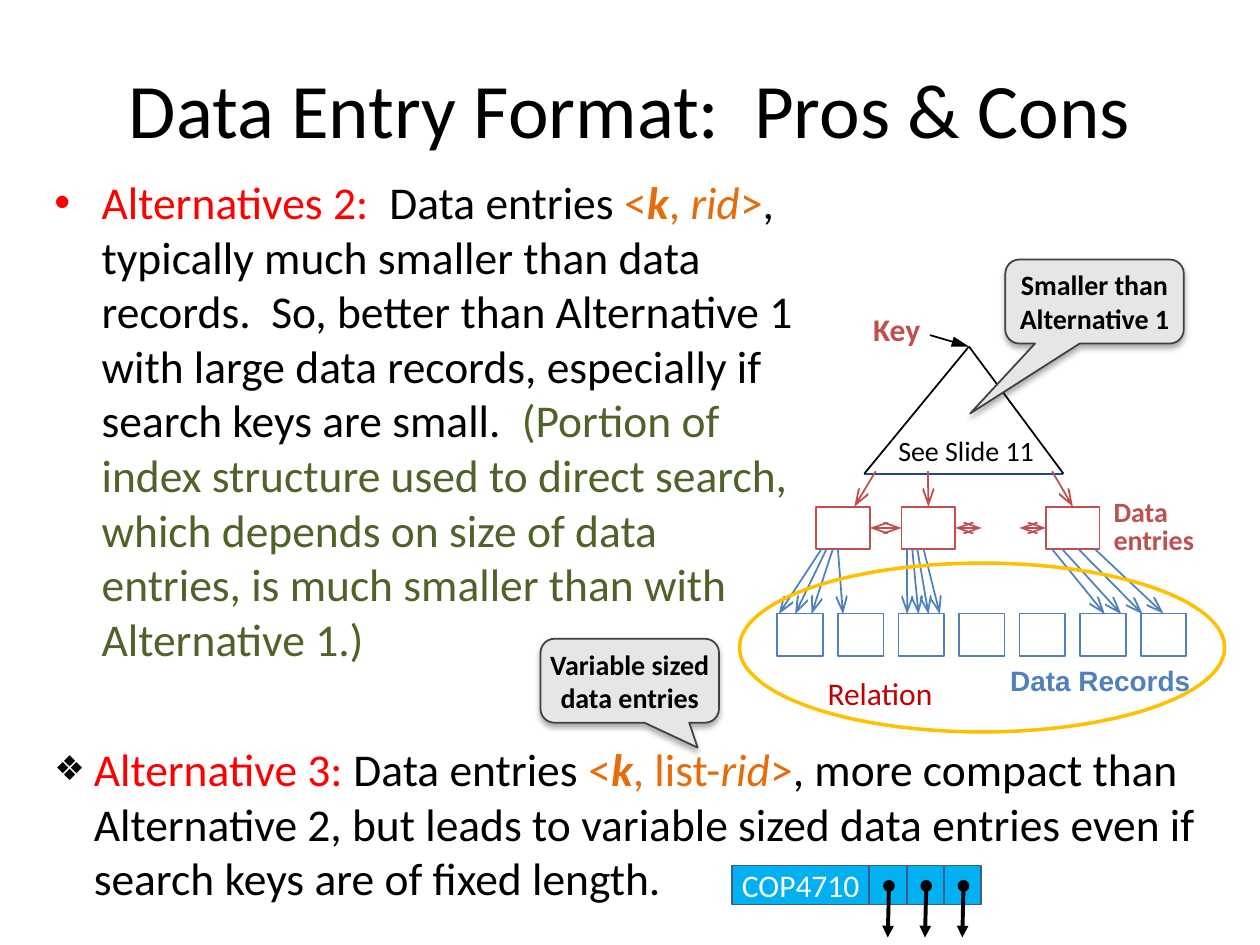
"""Build the slide on the pros and cons of data entry formats."""
from lxml.etree import SubElement
from pptx import Presentation
from pptx.dml.color import RGBColor
from pptx.enum.shapes import MSO_CONNECTOR, MSO_SHAPE as Kind
from pptx.enum.text import MSO_ANCHOR as Anchor, PP_ALIGN as Align
from pptx.oxml.ns import qn
from pptx.util import Pt

COLORS = {
    "black": "000000", "white": "FFFFFF", "red": "FF0000", "orange": "E46C0A",
    "olive": "4F6228", "blue": "4F81BD", "navy": "1F497D", "brick": "C0504D",
    "crimson": "C00000", "gold": "FFC000", "sky": "00B0F0", "steel": "3A5F8C",
    "pale": "E6E6E6", "gray": "404040",
}


def rgb(name):
    return RGBColor.from_string(COLORS[name])


class Deck:
    def __init__(self):
        self.prs = Presentation()
        self.prs.slide_width, self.prs.slide_height = Pt(720), Pt(540)
        self.slide = self.prs.slides.add_slide(self.prs.slide_layouts[5])
        self.shapes = self.slide.shapes

    def style(self, run, size, color, bold=False, italic=False, font="Calibri"):
        run.font.name, run.font.size = font, Pt(size)
        run.font.bold, run.font.italic = bold, italic
        run.font.color.rgb = rgb(color)

    def fill_text(self, frame, text, size, color, align=Align.LEFT, spacing=None, **look):
        frame.text = text
        for paragraph in frame.paragraphs:
            paragraph.alignment = align
            if spacing:
                paragraph.line_spacing = Pt(spacing)
            for run in paragraph.runs:
                self.style(run, size, color, **look)

    def title(self, text, *box):
        title = self.shapes.title
        title.left, title.top, title.width, title.height = map(Pt, box)
        title.text_frame.vertical_anchor = Anchor.MIDDLE
        self.fill_text(title.text_frame, text, 44, "black", Align.CENTER)

    def label(self, text, box, size, color, **look):
        frame = self.shapes.add_textbox(*map(Pt, box)).text_frame
        frame.word_wrap = False
        self.fill_text(frame, text, size, color, **look)

    def bullet(self, runs, box, indent, mark, mark_color, mark_size=100, after=0):
        frame = self.shapes.add_textbox(*map(Pt, box)).text_frame
        frame.word_wrap = True
        paragraph = frame.paragraphs[0]
        paragraph.space_before, paragraph.space_after = Pt(5.2), Pt(after)
        props = paragraph._p.get_or_add_pPr()
        props.set("marL", str(Pt(indent)))
        props.set("indent", str(-Pt(indent)))
        SubElement(SubElement(props, qn("a:buClr")), qn("a:srgbClr"), val=COLORS[mark_color])
        SubElement(props, qn("a:buSzPct"), val=str(mark_size * 1000))
        SubElement(props, qn("a:buFont"), typeface="Arial")
        SubElement(props, qn("a:buChar"), char=mark)
        for text, color, *emphasis in runs:
            run = paragraph.add_run()
            run.text = text
            self.style(run, 26, color, "bold" in emphasis, "italic" in emphasis)

    def box(self, kind, box, line, fill=None, width=1):
        shape = self.shapes.add_shape(kind, *map(Pt, box))
        shape.shadow.inherit = False
        if fill:
            shape.fill.solid()
            shape.fill.fore_color.rgb = rgb(fill)
        else:
            shape.fill.background()
        shape.line.color.rgb, shape.line.width = rgb(line), Pt(width)
        return shape

    def box_text(self, shape, text, size, color, **look):
        frame = shape.text_frame
        frame.word_wrap, frame.vertical_anchor = True, Anchor.MIDDLE
        frame.margin_left = frame.margin_right = 0
        self.fill_text(frame, text, size, color, Align.CENTER, **look)

    def callout(self, text, left, top, tip):
        callout = self.box(Kind.ROUNDED_RECTANGULAR_CALLOUT, (left, top, 102, 48), "gray", "pale")
        for index, value in enumerate((*tip, 0.167)):
            callout.adjustments[index] = value
        effects = callout._element.spPr.find(qn("a:effectLst"))
        shadow = SubElement(effects, qn("a:outerShdw"), blurRad=str(Pt(3.5)), dist=str(Pt(2.2)),
                            dir="5400000", rotWithShape="0")
        shade = SubElement(shadow, qn("a:srgbClr"), val=COLORS["black"])
        SubElement(shade, qn("a:alpha"), val="32000")
        self.box_text(callout, text, 16, "black", bold=True)

    def line(self, start, end, color, width=1, head=None, tail=None, length="lg"):
        """Draw a line whose ends are (x, y) points or (shape, site) pairs."""
        points = [(0, 0) if hasattr(spot[0], "shape_id") else spot for spot in (start, end)]
        line = self.shapes.add_connector(
            MSO_CONNECTOR.STRAIGHT, *(Pt(value) for point in points for value in point))
        for spot, join in ((start, line.begin_connect), (end, line.end_connect)):
            if hasattr(spot[0], "shape_id"):
                join(*spot)
        line.line.color.rgb, line.line.width = rgb(color), Pt(width)
        stroke = line.line._get_or_add_ln()
        for tag, kind in (("a:headEnd", head), ("a:tailEnd", tail)):
            if kind:
                SubElement(stroke, qn(tag), type=kind, w="med", len=length)
        SubElement(line._element.spPr, qn("a:effectLst"))


def draw_index(deck):
    records = [deck.box(Kind.RECTANGLE, (444.2 + 34.6 * i, 350.6, 26.1, 24.3), "blue")
               for i in range(7)]
    apex, left, right = (553.7, 198), (493.9, 270.7), (607.7, 270.7)
    deck.line(left, right, "navy")
    deck.line(left, apex, "black")
    deck.line(apex, right, "black")
    deck.line((531.4, 191.5), apex, "black", tail="triangle")

    first, second, last = [deck.box(Kind.RECTANGLE, (x, 289.6, 30.6, 24.2), "brick")
                           for x in (466.4, 515.2, 597.8)]
    middle = 301.7
    for start, end in (((first, 3), (second, 1)), ((second, 3), (561, middle)),
                       ((582.5, middle), (last, 1))):
        deck.line(start, end, "brick", head="arrow", tail="arrow")
    for x, end in ((500.4, (488.2, 289.6)), (530.5, (second, 0)), (601.2, (last, 0))):
        deck.line((x, 269.3), end, "brick", tail="arrow")

    pointers = ((469.4, 445), (472.3, 454.3), (475.9, 463.7), (478.8, 481.7),
                (518.4, 518.4), (521.3, 524.9), (524.2, 530.6), (527.8, 537.1),
                (601.2, 631.4), (607, 640.8), (616.3, 653))
    for start, end in pointers:
        deck.line((start, 313.8), (end, 351), "blue", tail="arrow")
    deck.line((625.7, 313.8), (records[-1], 0), "blue", tail="arrow")

    deck.label("Data\nentries", (629.3, 282.2, 60.5, 39.6), 16, "brick", bold=True, spacing=16)
    deck.label("Data Records", (570.2, 375.8, 118, 26.6), 16, "blue", bold=True, font="Arial")
    deck.label("Key", (491.8, 173.5, 41.8, 28.8), 18, "brick", bold=True)


def draw_entry(deck):
    key = deck.box(Kind.RECTANGLE, (418.3, 494.6, 78.5, 22.3), "steel", "sky")
    deck.box_text(key, "COP4710", 18, "white")
    for i in range(3):
        left = 496.8 + 21.3 * i
        deck.box(Kind.RECTANGLE, (left, 494.6, 21.3, 22.3), "steel", "sky")
        deck.line((left + 11.2, 506.2), (left + 10.5, 535.7), "black", 2.25,
                  "oval", "triangle", "med")


def main():
    deck = Deck()
    deck.callout("Variable sized data entries", 308.9, 365, (0.38, 0.796))
    deck.title("Data Entry Format:  Pros & Cons", 24, 18, 672, 87)
    deck.bullet([
        ("Alternatives 2:  ", "red"), ("Data entries ", "black"), ("<", "orange"),
        ("k", "orange", "bold", "italic"), (", ", "orange"), ("rid", "orange", "italic"),
        (">", "orange"),
        (", typically much smaller than data records.  So, better than Alternative 1 with "
         "large data records, especially if search keys are small.  ", "black"),
        ("(Portion of index structure used to direct search, which depends on size of data "
         "entries, is much smaller than with Alternative 1.)", "olive"),
    ], (24, 96, 438, 300), 27, "•", "red", after=6)
    draw_index(deck)
    deck.bullet([
        ("Alternative 3: ", "red"), ("Data entries ", "black"), ("<", "orange"),
        ("k", "orange", "bold", "italic"), (", list-", "orange"), ("rid", "orange", "italic"),
        (">", "orange"),
        (", more compact than Alternative 2, but leads to variable sized data entries even "
         "if search keys are of fixed length.", "black"),
    ], (24, 420, 672, 96), 22.5, "❖", "black", mark_size=75)
    deck.callout("Smaller than Alternative 1", 574.5, 148.3, (-0.697, 1.333))
    draw_entry(deck)
    deck.box(Kind.OVAL, (422.6, 321.8, 277.2, 96.5), "gold", width=2)
    deck.label("Relation", (465.8, 381.6, 75.6, 28.8), 18, "crimson")
    deck.label("See Slide 11", (506.2, 244.1, 92.9, 26.6), 16, "black")
    deck.prs.save("out.pptx")


if __name__ == "__main__":
    main()
